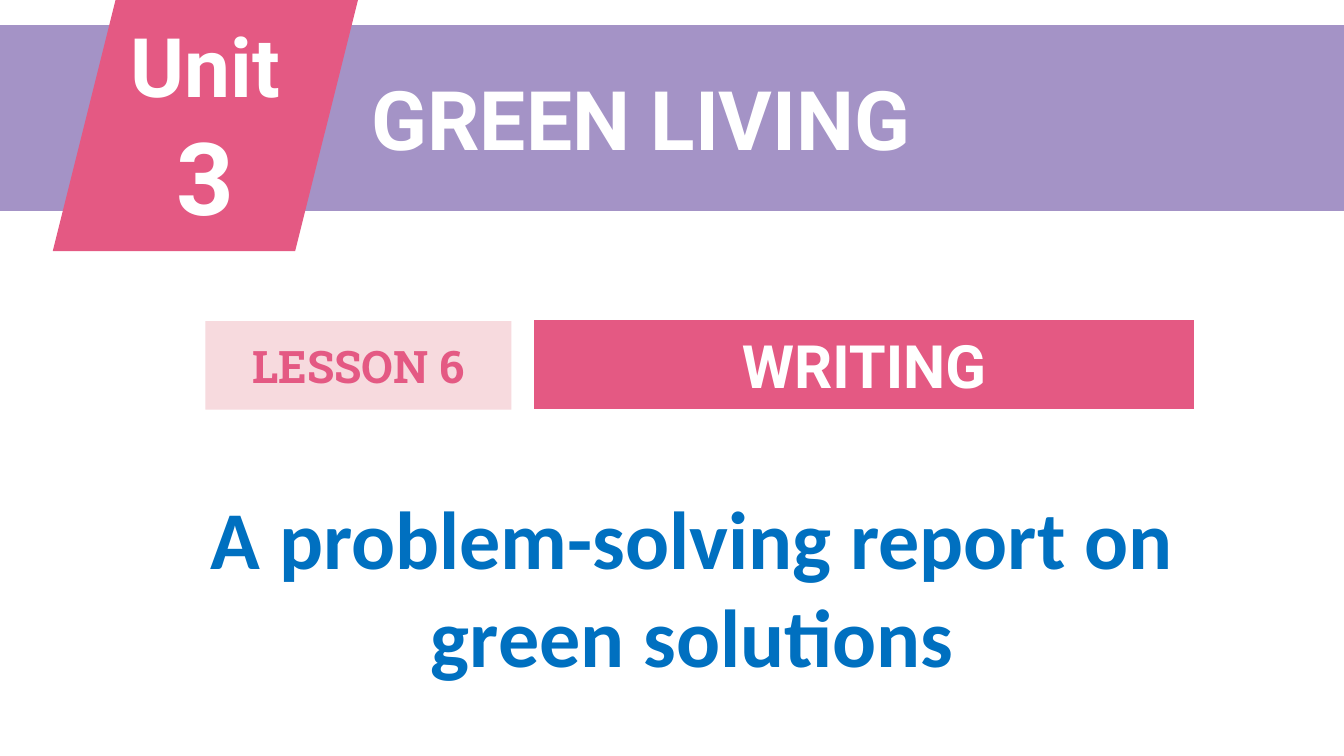
from pptx import Presentation
from pptx.dml.color import RGBColor
from pptx.enum.shapes import MSO_SHAPE
from pptx.enum.text import MSO_ANCHOR, PP_ALIGN
from pptx.util import Pt

RECT = MSO_SHAPE.RECTANGLE
SLANT = MSO_SHAPE.PARALLELOGRAM
MID, TOP = MSO_ANCHOR.MIDDLE, MSO_ANCHOR.TOP
LEFT, MIDDLE = PP_ALIGN.LEFT, PP_ALIGN.CENTER

WIDE, HIGH = 720, 405
WHITE, PINK, PALE = "FFFFFF", "E45983", "F7DADE"
PURPLE, BLUE = "A493C6", "0070C0"

# Each paragraph is a list of runs: (text, size)
UNIT = [[("Unit ", 44), ("3", 54)]]
TITLE = [[("GREEN LIVING", 44)]]
SKILL = [[("WRITING", 32)]]
LESSON = [[("LESSON 6", 24)]]
TOPIC = [[("A problem-solving report on", 44)], [("green solutions", 44)]]

# preset, box (left, top, width, height), fill, line, paragraphs, font, colour
SHAPES = [
    (RECT, (0, 13.5, WIDE, 99.5), PURPLE, None, [], None, None),
    (SLANT, (28.3, 0, 163.5, 134.5), PINK, None, UNIT, "Roboto", WHITE),
    (RECT, (285.5, 170.5, 355, 49.5), PINK, WHITE, SKILL, "Roboto", WHITE),
    (RECT, (110, 172, 164, 47.5), PALE, None, LESSON, "Roboto Slab", PINK),
]

# box, paragraphs, font, colour, alignment
TEXTS = [
    ((192, 33, 419, 60.5), TITLE, "Roboto", WHITE, LEFT),
    ((36.5, 257.5, 669, 114), TOPIC, "Calibri", BLUE, MIDDLE),
]


def rgb(code):
    return RGBColor.from_string(code)


def write(shape, paras, face, color, align, anchor):
    frame = shape.text_frame
    frame.word_wrap = True
    frame.vertical_anchor = anchor
    for i, runs in enumerate(paras):
        para = frame.add_paragraph() if i else frame.paragraphs[0]
        para.alignment = align
        for text, size in runs:
            run = para.add_run()
            run.text = text
            font = run.font
            font.name, font.size, font.bold = face, Pt(size), True
            font.color.rgb = rgb(color)


deck = Presentation()
deck.slide_width, deck.slide_height = Pt(WIDE), Pt(HIGH)
slide = deck.slides.add_slide(deck.slide_layouts[6])

for kind, box, fill, line, paras, face, color in SHAPES:
    shape = slide.shapes.add_shape(kind, *map(Pt, box))
    shape.shadow.inherit = False
    shape.fill.solid()
    shape.fill.fore_color.rgb = rgb(fill)
    if line:
        shape.line.color.rgb = rgb(line)
        shape.line.width = Pt(1.5)
    else:
        shape.line.fill.background()
    write(shape, paras, face, color, MIDDLE, MID)

for box, paras, face, color, align in TEXTS:
    label = slide.shapes.add_textbox(*map(Pt, box))
    write(label, paras, face, color, align, TOP)

deck.save("out.pptx")
